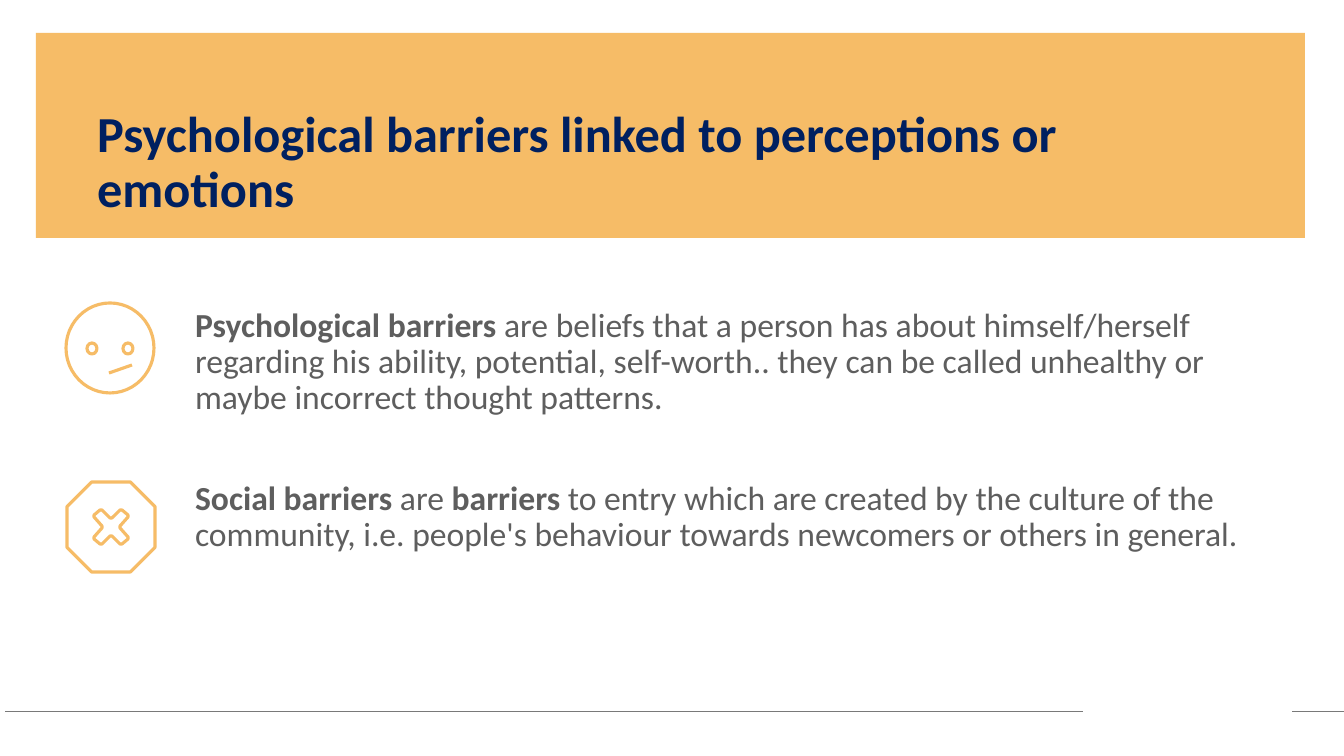
"""Build a slide on psychological and social barriers."""
from dataclasses import dataclass

import lxml.etree
import pptx
import pptx.dml.color
import pptx.enum.shapes
import pptx.enum.text
import pptx.oxml.ns
import pptx.util

PAGE_WIDTH, PAGE_HEIGHT = 1344, 756
SCALE = 12192000 / PAGE_WIDTH
SHAPE = pptx.enum.shapes.MSO_SHAPE


@dataclass(frozen=True)
class Theme:
    """Colours, type sizes and line widths of the deck."""
    font: str = "Calibri"
    accent: str = "F6BC67"
    heading: str = "002060"
    body: str = "5E5E5E"
    rule: str = "797979"
    heading_size: int = 36
    body_size: int = 24
    icon_line: float = 2.25
    rule_line: float = 0.5


THEME = Theme()

TITLE = "Psychological barriers linked to perceptions or emotions"
BARRIERS = [
    [("Psychological barriers", True),
     (" are beliefs that a person has about himself/herself regarding his ability, "
      "potential, self-worth.. they can be called unhealthy or maybe incorrect "
      "thought patterns.", False)],
    [("Social barriers", True), (" are ", False), ("barriers", True),
     (" to entry which are created by the culture of the community, i.e. people's "
      "behaviour towards newcomers or others in general.", False)],
]


def px(length):
    """Turn pixels into EMU."""
    return pptx.util.Emu(round(length * SCALE))


def rgb(colour):
    """Turn a hex string into a colour."""
    return pptx.dml.color.RGBColor.from_string(colour)


def write_text(holder, paragraphs, *, box, size, colour, gap=0):
    """Place a placeholder and fill it with paragraphs of (text, bold) spans."""
    holder.left, holder.top, holder.width, holder.height = map(px, box)
    frame = holder.text_frame
    frame.word_wrap = True
    frame.auto_size = pptx.enum.text.MSO_AUTO_SIZE.NONE
    frame.vertical_anchor = pptx.enum.text.MSO_ANCHOR.TOP
    for index, spans in enumerate(paragraphs):
        para = frame.add_paragraph() if index else frame.paragraphs[0]
        para.alignment = pptx.enum.text.PP_ALIGN.LEFT
        para.line_spacing = 0.9
        para.space_before = pptx.util.Pt(gap if index else 0)
        properties = para._p.get_or_add_pPr()
        properties.set("marL", "0")
        properties.set("indent", "0")
        lxml.etree.SubElement(properties, pptx.oxml.ns.qn("a:buNone"))
        for text, bold in spans:
            span = para.add_run()
            span.text = text
            span.font.name = THEME.font
            span.font.size = pptx.util.Pt(size)
            span.font.bold = bold
            span.font.color.rgb = rgb(colour)


def outline(shape):
    """Give an icon part an accent line and no fill."""
    shape.shadow.inherit = False
    shape.fill.background()
    shape.line.color.rgb = rgb(THEME.accent)
    shape.line.width = pptx.util.Pt(THEME.icon_line)


def add_line(page, start, end, *, colour, width):
    """Draw a straight line without shadow."""
    line = page.shapes.add_connector(
        pptx.enum.shapes.MSO_CONNECTOR.STRAIGHT, *map(px, (*start, *end)))
    line.line.color.rgb = rgb(colour)
    line.line.width = pptx.util.Pt(width)
    lxml.etree.SubElement(line.element.spPr, pptx.oxml.ns.qn("a:effectLst"))


def add_banner(page, box):
    """Draw the title band behind the title and write the title in it."""
    band = page.shapes.add_shape(SHAPE.RECTANGLE, *map(px, box))
    band.shadow.inherit = False
    band.fill.solid()
    band.fill.fore_color.rgb = rgb(THEME.accent)
    band.line.fill.background()
    band.element.getparent().insert(2, band.element)
    left, top, width, _ = box
    write_text(page.shapes.title, [[(TITLE, True)]],
               box=(left + 51, top + 71, width - 105, 77),
               size=THEME.heading_size, colour=THEME.heading)


def add_face_icon(page, box):
    """Draw a round face with two eyes and a slanted mouth."""
    left, top, width, height = box
    eyes = [(left + offset, top + 40, 10, 11) for offset in (21, 57)]
    for part in [(left, top, width, height), *eyes]:
        outline(page.shapes.add_shape(SHAPE.OVAL, *map(px, part)))
    add_line(page, (left + 43, top + 70), (left + 66, top + 62),
             colour=THEME.accent, width=THEME.icon_line)


def add_stop_icon(page, box):
    """Draw an octagon with an outlined cross in its centre."""
    left, top, width, height = box
    octagon = page.shapes.add_shape(SHAPE.OCTAGON, *map(px, box))
    octagon.adjustments[0] = 0.28
    outline(octagon)
    arm = [(1, -9), (9, -17), (11, -17), (17, -12), (17, -10), (9, -1)]
    cross = []
    for sign_x, sign_y in ((1, 1), (1, -1), (-1, -1), (-1, 1)):
        points = arm if sign_x == sign_y else reversed(arm)
        cross += [(px(left + width / 2 + sign_x * x), px(top + height / 2 + sign_y * y))
                  for x, y in points]
    builder = page.shapes.build_freeform(*cross[0])
    builder.add_line_segments(cross[1:], close=True)
    outline(builder.convert_to_shape())


def add_barriers(page, box):
    """Place the two icons and the text to their right."""
    left, top, width, height = box
    write_text(page.placeholders[1], BARRIERS,
               box=(left + 119, top, width - 119, height),
               size=THEME.body_size, colour=THEME.body, gap=46)
    add_face_icon(page, (left, top, 88, 90))
    add_stop_icon(page, (left + 1, top + 179, 88, 90))


def add_footer_rule(page, box):
    """Draw the bottom rule in two pieces with a gap between them."""
    left, top, width, _ = box
    for start, end in ((left + 1078, left), (left + width, left + 1287)):
        add_line(page, (start, top), (end, top),
                 colour=THEME.rule, width=THEME.rule_line)


def main():
    """Build and save the deck."""
    deck = pptx.Presentation()
    deck.slide_width, deck.slide_height = px(PAGE_WIDTH), px(PAGE_HEIGHT)
    page = deck.slides.add_slide(deck.slide_layouts[1])
    add_banner(page, (36, 33, 1269, 205))
    add_barriers(page, (66, 303, 1185, 358))
    add_footer_rule(page, (5, 711, PAGE_WIDTH - 5, 1))
    deck.save("out.pptx")


if __name__ == "__main__":
    main()
